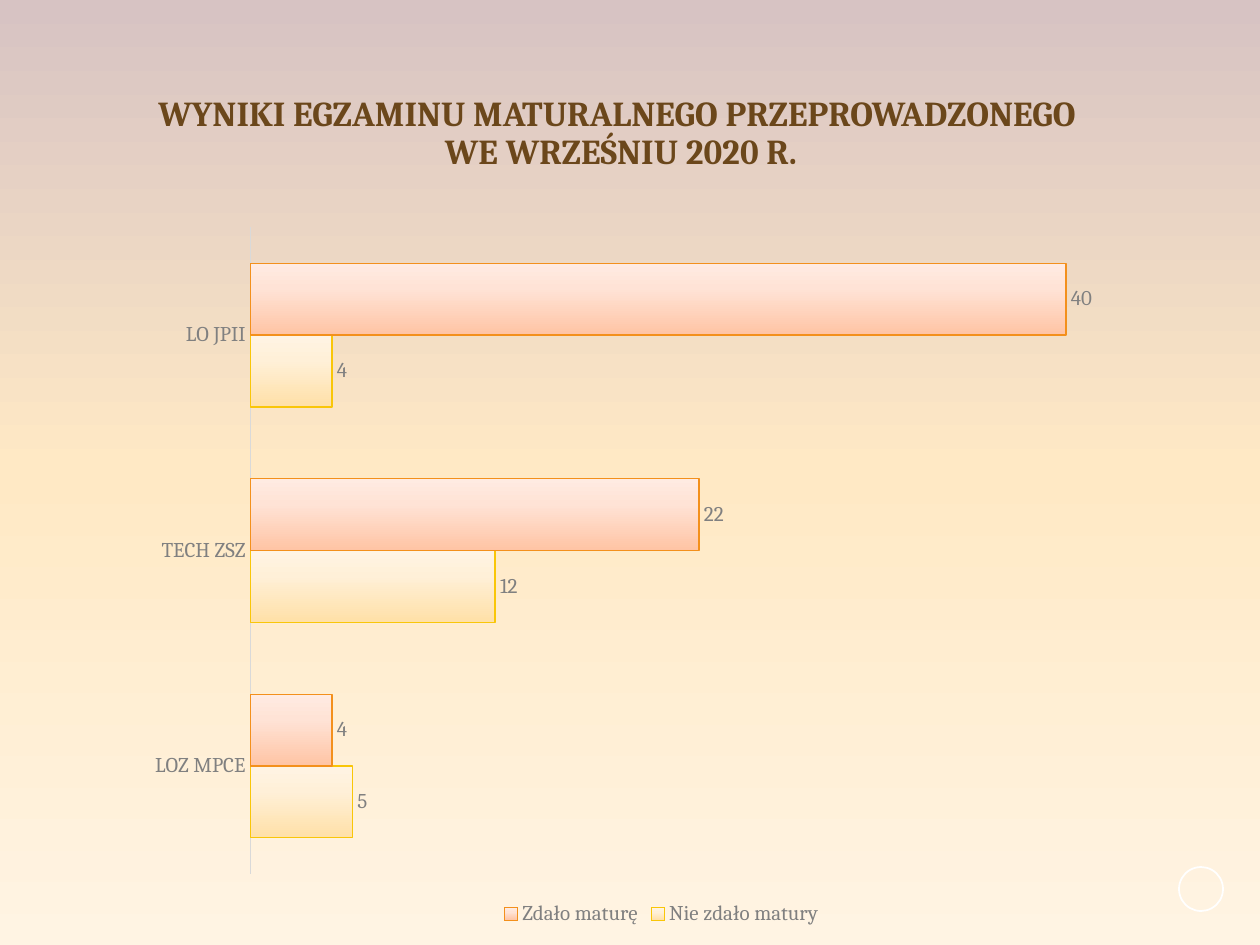
"""Build a slide charting the September 2020 school-leaving exam results."""
from dataclasses import dataclass

from lxml.etree import SubElement
from pptx import Presentation
from pptx.chart.data import CategoryChartData
from pptx.dml.color import RGBColor
from pptx.enum.chart import XL_CHART_TYPE, XL_LABEL_POSITION, XL_LEGEND_POSITION, XL_TICK_MARK
from pptx.enum.shapes import MSO_SHAPE
from pptx.enum.text import MSO_ANCHOR, MSO_AUTO_SIZE, PP_ALIGN
from pptx.oxml.ns import qn
from pptx.util import Emu, Pt

EMU_PER_PX = 914400 / 126


@dataclass(frozen=True)
class Gradient:
    stops: tuple[tuple[int, str], ...]
    angle: int


@dataclass(frozen=True)
class Theme:
    font: str = "Cambria"
    title: str = "6B471B"
    label: str = "808080"
    axis: str = "D9D9D9"
    ring: str = "FFFFFF"
    title_size: int = 20
    label_size: int = 12
    line_width: float = 0.75
    background: Gradient = Gradient(((0, "D7C3C3"), (50, "FFE9C5"), (100, "FFF4E3")), 90)


@dataclass(frozen=True)
class Result:
    name: str
    values: tuple[int, ...]
    fill: Gradient
    line: str


THEME = Theme()
SCHOOLS = ("LOZ MPCE", "TECH ZSZ", "LO JPII")
RESULTS = (
    Result("Nie zdało matury", (5, 12, 4),
           Gradient(((0, "FFE0A7"), (65, "FFF0D8"), (100, "FFF4E4")), 270), "F9C608"),
    Result("Zdało maturę", (4, 22, 40),
           Gradient(((0, "FFC4A4"), (65, "FFE3D6"), (100, "FFEBE2")), 270), "F3901C"),
)


def px(length: int) -> Emu:
    """Turn pixels into EMU."""
    return Emu(round(length * EMU_PER_PX))


def paint_gradient(fill, owner, gradient: Gradient) -> None:
    """Give a fill the stops and clockwise angle of a gradient."""
    fill.gradient()
    fill.gradient_angle = (360 - gradient.angle) % 360
    stop_list = next(owner.iter(qn("a:gsLst")))
    for stop in list(stop_list):
        stop_list.remove(stop)
    for position, color in gradient.stops:
        stop = SubElement(stop_list, qn("a:gs"), pos=str(position * 1000))
        SubElement(stop, qn("a:srgbClr"), val=color)


def format_line(line, color: str, width: float) -> None:
    """Set the colour and width of a line."""
    line.color.rgb = RGBColor.from_string(color)
    line.width = Pt(width)


def format_font(font, *, size: int, color: str, bold: bool = False) -> None:
    """Set the theme's typeface with a size, colour and weight."""
    font.name = THEME.font
    font.size = Pt(size)
    font.bold = bold
    font.color.rgb = RGBColor.from_string(color)


def write_title(page, text: str, *, size: int, color: str) -> None:
    """Place and format the title placeholder."""
    box = page.shapes.title
    box.left, box.top, box.width, box.height = px(54), px(55), px(1134), px(158)
    frame = box.text_frame
    frame.word_wrap = True
    frame.auto_size = MSO_AUTO_SIZE.NONE
    frame.vertical_anchor = MSO_ANCHOR.MIDDLE
    frame.text = text
    para = frame.paragraphs[0]
    para.alignment = PP_ALIGN.CENTER
    para.line_spacing = 0.9
    for span in para.runs:
        format_font(span.font, size=size, color=color, bold=True)


def draw_ring(page) -> None:
    """Draw the open circle in the lower right corner."""
    ring = page.shapes.add_shape(MSO_SHAPE.OVAL, px(1179), px(867), px(44), px(44))
    ring.shadow.inherit = False
    ring.fill.background()
    format_line(ring.line, THEME.ring, 1)


def draw_chart(page, schools: tuple[str, ...], results: tuple[Result, ...]) -> None:
    """Draw the clustered bars of exam results by school."""
    data = CategoryChartData()
    data.categories = schools
    for result in results:
        data.add_series(result.name, result.values)
    chart = page.shapes.add_chart(
        XL_CHART_TYPE.BAR_CLUSTERED, px(134), px(213), px(1055), px(718), data).chart
    format_font(chart.font, size=THEME.label_size, color=THEME.label)
    chart.has_title = False
    chart.has_legend = True
    chart.legend.position = XL_LEGEND_POSITION.BOTTOM
    chart.legend.include_in_layout = False

    chart.value_axis.visible = False
    chart.value_axis.has_major_gridlines = False
    axis = chart.category_axis
    axis.major_tick_mark = axis.minor_tick_mark = XL_TICK_MARK.NONE
    format_line(axis.format.line, THEME.axis, THEME.line_width)

    plot = chart.plots[0]
    plot.gap_width = 100
    plot.overlap = 0
    plot.vary_by_categories = False
    for series, result in zip(plot.series, results):
        paint_gradient(series.format.fill, series._element, result.fill)
        format_line(series.format.line, result.line, THEME.line_width)
        labels = series.data_labels
        labels.show_value = True
        labels.position = XL_LABEL_POSITION.OUTSIDE_END
        format_font(labels.font, size=THEME.label_size, color=THEME.label)


def main() -> None:
    """Build and save the deck."""
    deck = Presentation()
    deck.slide_width, deck.slide_height = px(1260), px(945)
    page = deck.slides.add_slide(deck.slide_layouts[5])
    paint_gradient(page.background.fill, page._element, THEME.background)
    draw_ring(page)
    write_title(page, "WYNIKI EGZAMINU MATURALNEGO PRZEPROWADZONEGO \vWE WRZEŚNIU 2020 R.",
                size=THEME.title_size, color=THEME.title)
    draw_chart(page, SCHOOLS, RESULTS)
    deck.save("out.pptx")


if __name__ == "__main__":
    main()
